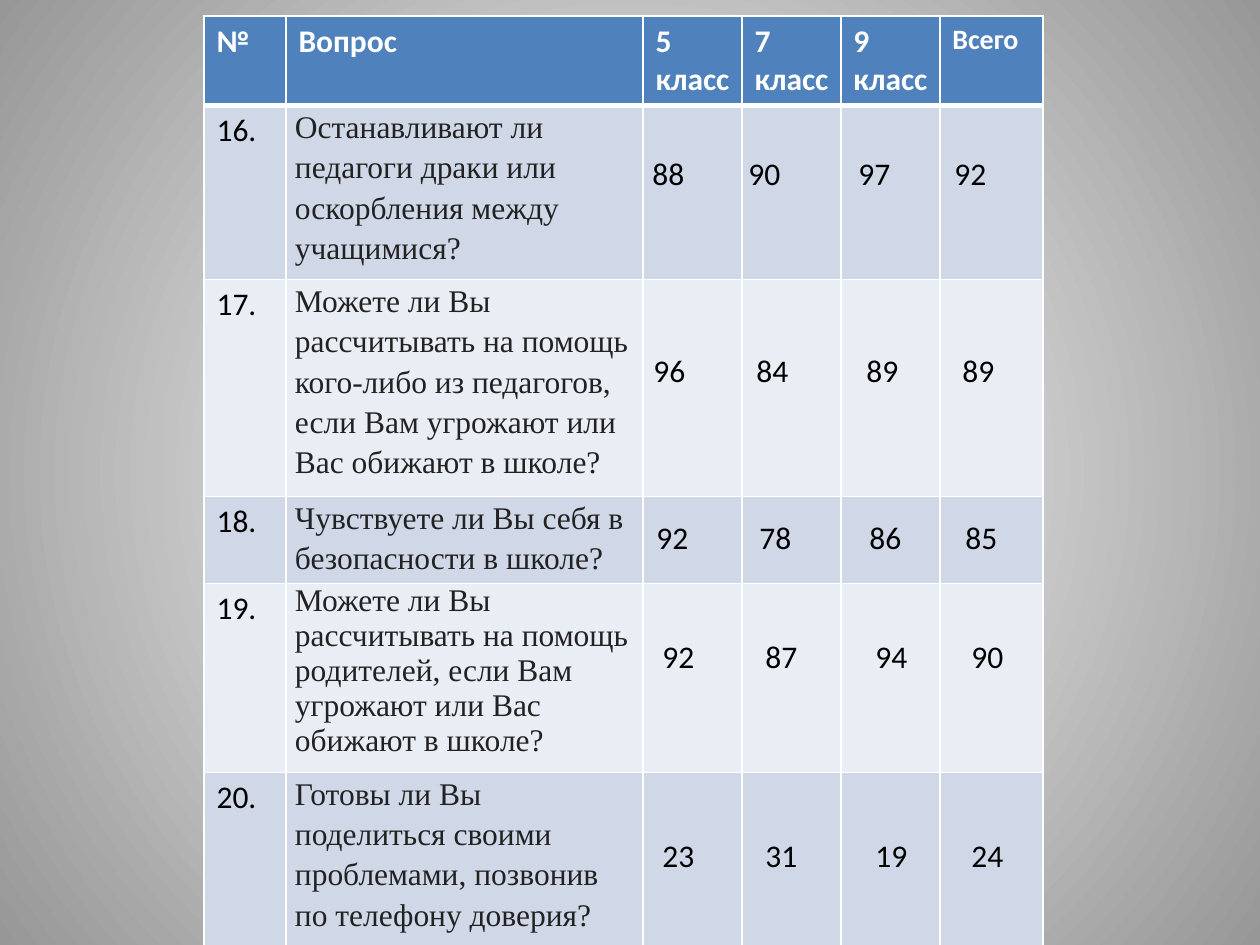
from dataclasses import dataclass

from lxml import etree
from pptx import Presentation
from pptx import util as u
from pptx.dml.color import RGBColor
from pptx.enum import text
from pptx.oxml import ns

EMU_PER_INCH = 914400
PX_PER_INCH = 126

WHITE = RGBColor(0xFF, 0xFF, 0xFF)
GREY = RGBColor(0x97, 0x97, 0x97)
BLACK = RGBColor(0x00, 0x00, 0x00)
INK = RGBColor(0x22, 0x22, 0x22)
HEADER_BLUE = RGBColor(0x4F, 0x81, 0xBD)
BANDS = (RGBColor(0xD0, 0xD8, 0xE8), RGBColor(0xE9, 0xED, 0xF4))

SANS = "Calibri"
SERIF = "Times New Roman"

TABLE_LEFT, TABLE_TOP = 204, 16
HEADER_HEIGHT = 88
COLUMN_WIDTHS = (82, 357, 99, 99, 99, 103)
HEADINGS = ("№", "Вопрос", "5 класс", "7 класс", "9 класс", "Всего")
TAB_STEPS = (0, 110, 206)


@dataclass(frozen=True)
class Question:
    number: str
    wording: str
    height: int
    scores: tuple[int, ...]
    scores_left: int
    scores_top: int
    scores_width: int
    first_tab: int = 103
    spacing: float | None = 1.15


QUESTIONS = (
    Question("16.", "Останавливают ли педагоги драки или оскорбления между учащимися?",
             174, (88, 90, 97, 92), 640, 148, 373, first_tab=96),
    Question("17.", "Можете ли Вы рассчитывать на помощь кого-либо из педагогов, "
             "если Вам угрожают или Вас обижают в школе?",
             217, (96, 84, 89, 89), 641, 345, 380),
    Question("18.", "Чувствуете ли Вы себя в безопасности в школе?",
             87, (92, 78, 86, 85), 644, 512, 373),
    Question("19.", "Можете ли Вы рассчитывать на помощь родителей, "
             "если Вам угрожают или Вас обижают в школе?",
             189, (92, 87, 94, 90), 650, 631, 380, spacing=None),
    Question("20.", "Готовы ли Вы поделиться своими проблемами, позвонив по телефону доверия?",
             174, (23, 31, 19, 24), 650, 830, 380),
)


def px(length: int) -> u.Emu:
    return u.Emu(round(length * EMU_PER_INCH / PX_PER_INCH))


def write(frame, content: str, *, font: str = SANS, size: int = 18,
          color: RGBColor = BLACK, bold: bool = False, spacing: float | None = None):
    para = frame.paragraphs[0]
    para.line_spacing = spacing
    span = para.add_run()
    span.text = content
    span.font.name = font
    span.font.size = u.Pt(size)
    span.font.bold = bold
    span.font.color.rgb = color
    return para


def paint_background(page) -> None:
    fill = page.background.fill
    fill.gradient()
    for stop, color in zip(fill.gradient_stops, (WHITE, GREY)):
        stop.color.rgb = color
    linear = page.element.find(".//" + ns.qn("a:lin"))
    circle = etree.Element(ns.qn("a:path"), path="circle")
    etree.SubElement(circle, ns.qn("a:fillToRect"),
                     {side: "50000" for side in "ltrb"})
    linear.getparent().replace(linear, circle)


def style_cell(cell, fill: RGBColor, bottom: int = 1) -> None:
    properties = cell._tc.get_or_add_tcPr()
    for side, points in (("L", 1), ("R", 1), ("T", 1), ("B", bottom)):
        line = etree.SubElement(properties, ns.qn(f"a:ln{side}"), w=str(u.Pt(points)))
        solid = etree.SubElement(line, ns.qn("a:solidFill"))
        etree.SubElement(solid, ns.qn("a:srgbClr"), val=str(WHITE))
    cell.fill.solid()
    cell.fill.fore_color.rgb = fill


def draw_table(page) -> None:
    heights = (HEADER_HEIGHT, *(question.height for question in QUESTIONS))
    table = page.shapes.add_table(
        len(heights), len(COLUMN_WIDTHS), px(TABLE_LEFT), px(TABLE_TOP),
        px(sum(COLUMN_WIDTHS)), px(sum(heights))).table
    for column, width in zip(table.columns, COLUMN_WIDTHS):
        column.width = px(width)
    for row, height in zip(table.rows, heights):
        row.height = px(height)

    for cell, heading in zip(table.rows[0].cells, HEADINGS):
        style_cell(cell, HEADER_BLUE, bottom=3)
        cell.margin_right = px(8)
        size = 16 if heading == HEADINGS[-1] else 18
        write(cell.text_frame, heading, size=size, color=WHITE, bold=True)

    for index, question in enumerate(QUESTIONS):
        cells = list(table.rows[index + 1].cells)
        for cell in cells:
            style_cell(cell, BANDS[index % 2])
        write(cells[0].text_frame, question.number)
        wording = cells[1]
        wording.margin_left = wording.margin_right = px(9)
        wording.margin_top = wording.margin_bottom = 0
        write(wording.text_frame, question.wording, font=SERIF, color=INK,
              spacing=question.spacing)


def draw_scores(page, question: Question) -> None:
    box = page.shapes.add_textbox(px(question.scores_left), px(question.scores_top),
                                  px(question.scores_width), px(50))
    frame = box.text_frame
    frame.word_wrap = False
    frame.auto_size = text.MSO_AUTO_SIZE.SHAPE_TO_FIT_TEXT
    para = write(frame, "\t".join(map(str, question.scores)))
    stops = etree.SubElement(para._p.get_or_add_pPr(), ns.qn("a:tabLst"))
    for step in TAB_STEPS:
        etree.SubElement(stops, ns.qn("a:tab"), algn="l",
                         pos=str(px(question.first_tab + step)))


def main() -> None:
    deck = Presentation()
    deck.slide_width, deck.slide_height = px(1260), px(945)
    page = deck.slides.add_slide(deck.slide_layouts[6])
    paint_background(page)
    draw_table(page)
    for question in QUESTIONS:
        draw_scores(page, question)
    deck.save("out.pptx")


if __name__ == "__main__":
    main()
